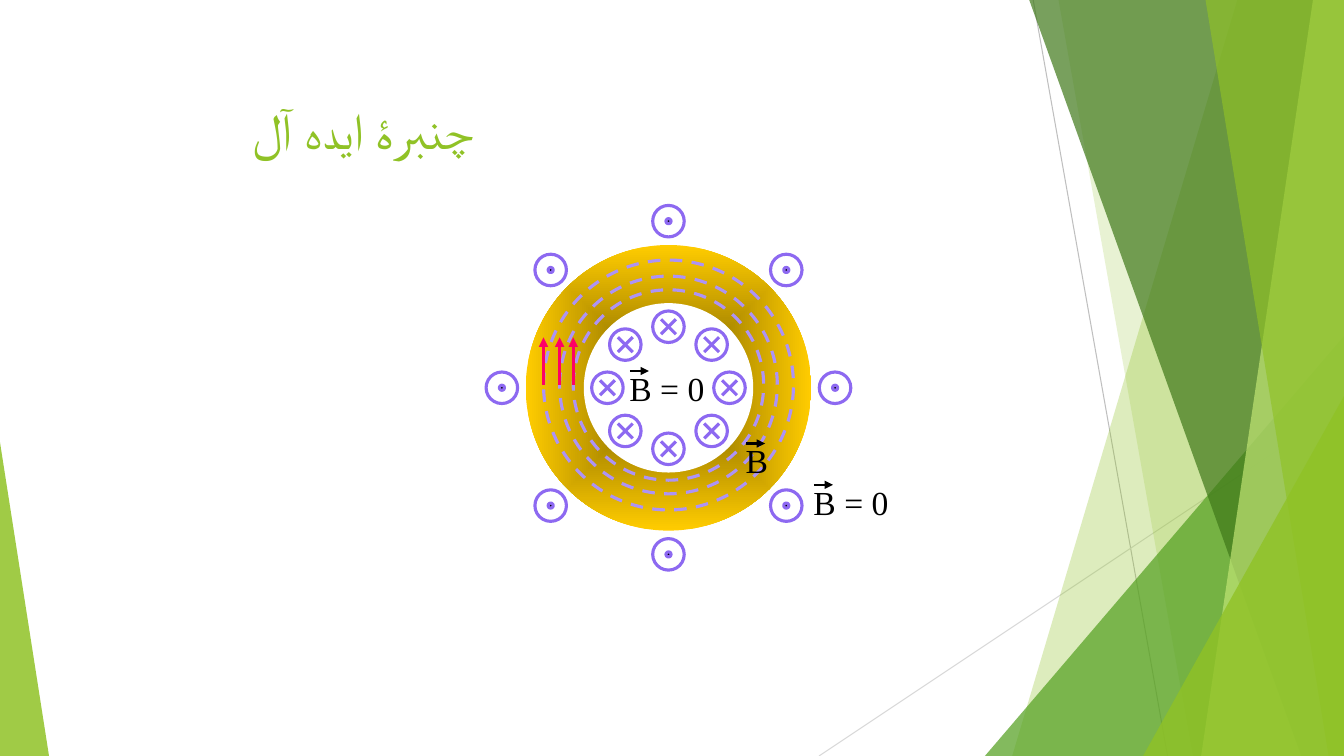
from math import cos, pi, sin

from lxml.etree import SubElement
from pptx import Presentation
from pptx.dml.color import RGBColor
from pptx.enum.dml import MSO_LINE
from pptx.enum.shapes import MSO_CONNECTOR, MSO_SHAPE
from pptx.enum.text import MSO_ANCHOR, MSO_AUTO_SIZE, PP_ALIGN
from pptx.oxml import parse_xml
from pptx.oxml.ns import nsdecls, qn
from pptx.util import Pt

WHITE = RGBColor(0xFF, 0xFF, 0xFF)
BLACK = RGBColor(0x00, 0x00, 0x00)
GREEN = RGBColor(0x90, 0xC2, 0x26)
MID_GREEN = RGBColor(0x54, 0xA0, 0x21)
DARK_GREEN = RGBColor(0x3F, 0x78, 0x19)
PALE_GREEN = RGBColor(0xC0, 0xE4, 0x74)
GREY = RGBColor(0xBF, 0xBF, 0xBF)
LIGHT_GREY = RGBColor(0xD9, 0xD9, 0xD9)
GOLD = RGBColor(0xFF, 0xCC, 0x00)
DARK_GOLD = RGBColor(0x76, 0x5E, 0x00)
VIOLET = RGBColor(0x8D, 0x69, 0xF1)
LILAC = RGBColor(0xAD, 0x93, 0xF5)
PINK = RGBColor(0xFF, 0x00, 0x66)

WIDTH, HEIGHT = 960, 540
CENTER_X, CENTER_Y = 477.5, 277
MARK_SIZE = 22.5
DOT_SIZE = 3.6


def write_text(frame, text, font, size, color):
    paragraph = frame.paragraphs[0]
    paragraph.alignment = PP_ALIGN.LEFT
    run = paragraph.add_run()
    run.text = text
    run.font.name = font
    run.font.size = Pt(size)
    run.font.color.rgb = color


def style_shape(shape, fill=None, opacity=100, line=None, weight=2.25):
    shape.shadow.inherit = False
    if fill is None:
        shape.fill.background()
    else:
        shape.fill.solid()
        shape.fill.fore_color.rgb = fill
        if opacity < 100:
            color = shape.fill._xPr.find(f"{qn('a:solidFill')}/{qn('a:srgbClr')}")
            SubElement(color, qn("a:alpha"), val=str(opacity * 1000))
    if line is None:
        shape.line.fill.background()
    else:
        shape.line.color.rgb = line
        shape.line.width = Pt(weight)


def add_line(shapes, start, end, color, weight=2.25, arrow=False):
    line = shapes.add_connector(MSO_CONNECTOR.STRAIGHT, *map(Pt, start + end))
    line.line.color.rgb = color
    line.line.width = Pt(weight)
    if arrow:
        SubElement(line.line._get_or_add_ln(), qn("a:tailEnd"), type="triangle")
    SubElement(line._element.spPr, qn("a:effectLst"))


def add_circle(shapes, x, y, diameter, **style):
    circle = shapes.add_shape(MSO_SHAPE.OVAL, Pt(x - diameter / 2), Pt(y - diameter / 2),
                              Pt(diameter), Pt(diameter))
    style_shape(circle, **style)
    return circle


def add_band(shapes, top_left, bottom_left, color, opacity):
    """Band that runs from a slanted left edge to the right side of the slide."""
    builder = shapes.build_freeform(Pt(top_left), Pt(-0.6))
    corners = [(WIDTH, -0.6), (WIDTH, HEIGHT), (bottom_left, HEIGHT)]
    builder.add_line_segments([(Pt(x), Pt(y)) for x, y in corners])
    style_shape(builder.convert_to_shape(), color, opacity)


def add_triangle(shapes, left, top, width, apex, color, opacity):
    triangle = shapes.add_shape(MSO_SHAPE.ISOSCELES_TRIANGLE, Pt(left), Pt(top),
                                Pt(width), Pt(HEIGHT - top))
    triangle.adjustments[0] = apex
    style_shape(triangle, color, opacity)


def add_background(shapes):
    add_line(shapes, (738, 0), (834, HEIGHT), GREY, 0.75)
    add_line(shapes, (WIDTH, 290), (585, HEIGHT), LIGHT_GREY, 0.75)
    add_band(shapes, 884, 723, GREEN, 30)
    add_band(shapes, 756, 852, GREEN, 20)
    add_triangle(shapes, 703.5, 240, 256.5, 1, MID_GREEN, 72)
    add_band(shapes, 735, 929.5, DARK_GREEN, 70)
    add_band(shapes, 938, 858, PALE_GREEN, 70)
    add_band(shapes, 861, 949, GREEN, 65)
    add_triangle(shapes, 816.5, 283, 143.5, 1, GREEN, 80)
    add_triangle(shapes, 0, 316, 35, 0, GREEN, 85)


def apply_radial_gradient(shape, inner, outer):
    properties = shape._element.spPr
    gradient = parse_xml(
        f'<a:gradFill {nsdecls("a")} rotWithShape="1"><a:gsLst>'
        f'<a:gs pos="0"><a:srgbClr val="{inner}"/></a:gs>'
        f'<a:gs pos="100000"><a:srgbClr val="{outer}"/></a:gs></a:gsLst>'
        '<a:path path="shape"><a:fillToRect l="50000" t="50000" r="50000" b="50000"/>'
        '</a:path></a:gradFill>')
    properties.replace(properties.find(qn("a:solidFill")), gradient)


def add_out_mark(shapes, x, y):
    add_circle(shapes, x, y, MARK_SIZE, line=VIOLET)
    add_circle(shapes, x, y, DOT_SIZE, fill=BLACK, line=VIOLET)


def add_in_mark(shapes, x, y):
    add_circle(shapes, x, y, MARK_SIZE, line=VIOLET)
    arm = 5.3
    add_line(shapes, (x - arm, y - arm), (x + arm, y + arm), VIOLET)
    add_line(shapes, (x - arm, y + arm), (x + arm, y - arm), VIOLET)


def add_mark_ring(shapes, radius, add_mark):
    for step in range(8):
        angle = step * pi / 4
        add_mark(shapes, CENTER_X + radius * cos(angle), CENTER_Y + radius * sin(angle))


def add_vector_label(shapes, text, left, top, width):
    box = shapes.add_textbox(Pt(left), Pt(top), Pt(width), Pt(36))
    box.text_frame.word_wrap = False
    box.text_frame.auto_size = MSO_AUTO_SIZE.SHAPE_TO_FIT_TEXT
    write_text(box.text_frame, text, font="Times New Roman", size=24, color=BLACK)
    add_line(shapes, (left + 7.4, top + 5.8), (left + 21, top + 5.8), BLACK, 1.5, arrow=True)


def add_toroid(shapes):
    # Core and its hole
    core = add_circle(shapes, CENTER_X, CENTER_Y, 204, fill=GOLD)
    apply_radial_gradient(core, DARK_GOLD, GOLD)
    add_circle(shapes, CENTER_X, CENTER_Y, 121, fill=WHITE)

    # Currents into and out of the plane
    add_mark_ring(shapes, 43.6, add_in_mark)
    add_mark_ring(shapes, 119, add_out_mark)

    # Field lines, each with its arrow
    field_y = CENTER_Y - 2
    for diameter in (136, 155.5, 178.5):
        field_line = add_circle(shapes, CENTER_X, field_y, diameter, line=LILAC)
        field_line.line.dash_style = MSO_LINE.DASH
        x = CENTER_X - diameter / 2
        add_line(shapes, (x, field_y), (x, field_y - 34), PINK, arrow=True)

    # Field values
    add_vector_label(shapes, "B", 525.5, 311, 30)
    add_vector_label(shapes, "B = 0", 574, 340.5, 68.5)
    add_vector_label(shapes, "B = 0", 442.5, 259.2, 68.5)


def place_title(slide, text):
    title = slide.shapes.title
    title.left, title.top, title.width, title.height = map(Pt, (173, 67.5, 630, 66))
    title.text_frame.vertical_anchor = MSO_ANCHOR.TOP
    write_text(title.text_frame, text, font="Karla", size=36, color=GREEN)
    slide.shapes._spTree.append(title._element)


def main():
    presentation = Presentation()
    presentation.slide_width, presentation.slide_height = Pt(WIDTH), Pt(HEIGHT)
    slide = presentation.slides.add_slide(presentation.slide_layouts[5])
    add_background(slide.shapes.add_group_shape().shapes)
    place_title(slide, "چنبرۀ ايده آل")
    add_toroid(slide.shapes.add_group_shape().shapes)
    presentation.save("out.pptx")


if __name__ == "__main__":
    main()
